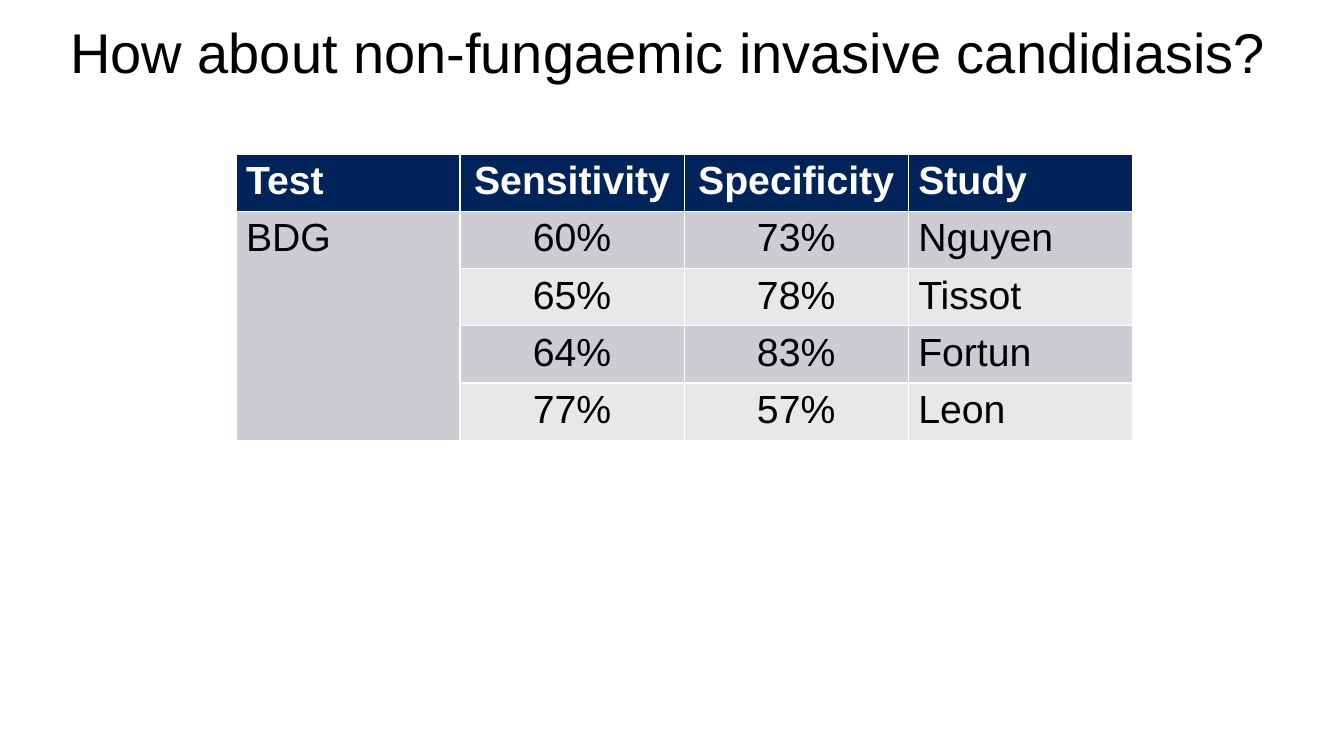
"""Build a slide on test accuracy in non-fungaemic invasive candidiasis."""
from dataclasses import dataclass

import pptx
import pptx.dml.color
import pptx.enum.text
import pptx.util
from pptx.util import Inches

COLORS = {
    "header": "00235A",
    "odd": "CCCDD2",
    "even": "E7E8EA",
    "light": "FFFFFF",
    "dark": "000000",
}
FONT = "Arial"
ALIGN = pptx.enum.text.PP_ALIGN


@dataclass(frozen=True)
class Result:
    """One table row: a test, its accuracy and the study reporting it."""

    test: str
    sensitivity: str
    specificity: str
    study: str

    def values(self) -> tuple[str, ...]:
        """Return the row's texts in column order."""
        return self.test, self.sensitivity, self.specificity, self.study


HEADINGS = Result("Test", "Sensitivity", "Specificity", "Study")
RESULTS = [
    Result("BDG", "60%", "73%", "Nguyen"),
    Result("", "65%", "78%", "Tissot"),
    Result("", "64%", "83%", "Fortun"),
    Result("", "77%", "57%", "Leon"),
]
ALIGNMENTS = [ALIGN.LEFT, ALIGN.CENTER, ALIGN.CENTER, ALIGN.LEFT]


def rgb(color: str) -> pptx.dml.color.RGBColor:
    """Look up a named colour."""
    return pptx.dml.color.RGBColor.from_string(COLORS[color])


def format_paragraph(paragraph, size: int, color: str, align, bold: bool = False) -> None:
    """Set the font and alignment of a whole paragraph."""
    paragraph.alignment = align
    paragraph.font.name = FONT
    paragraph.font.size = pptx.util.Pt(size)
    paragraph.font.bold = bold
    paragraph.font.color.rgb = rgb(color)


def add_question(slide) -> None:
    """Fill the title placeholder with the slide's question."""
    question = slide.shapes.title
    question.left, question.top = Inches(0.24), Inches(0.12)
    question.width, question.height = Inches(12.76), Inches(0.77)
    frame = question.text_frame
    frame.text = "How about non-fungaemic invasive candidiasis?"
    frame.word_wrap = True
    frame.auto_size = pptx.enum.text.MSO_AUTO_SIZE.SHAPE_TO_FIT_TEXT
    frame.vertical_anchor = pptx.enum.text.MSO_ANCHOR.TOP
    format_paragraph(frame.paragraphs[0], 40, "dark", ALIGN.CENTER)


def add_results(slide) -> None:
    """Draw the accuracy table with one test spanning all studies."""
    rows = [HEADINGS, *RESULTS]
    accuracy = slide.shapes.add_table(
        len(rows), len(ALIGNMENTS),
        Inches(2.34), Inches(1.53), Inches(8.89), Inches(2.03),
    ).table
    for row, result in enumerate(rows):
        is_header = row == 0
        fill = "header" if is_header else ("odd" if row % 2 else "even")
        for column, (value, align) in enumerate(zip(result.values(), ALIGNMENTS)):
            cell = accuracy.cell(row, column)
            cell.text = value
            cell.fill.solid()
            cell.fill.fore_color.rgb = rgb(fill)
            format_paragraph(
                cell.text_frame.paragraphs[0], 28,
                "light" if is_header else "dark", align, is_header,
            )
    accuracy.cell(1, 0).merge(accuracy.cell(len(RESULTS), 0))


def main() -> None:
    """Create and save the presentation."""
    presentation = pptx.Presentation()
    presentation.slide_width = Inches(13.33)
    presentation.slide_height = Inches(7.5)
    slide = presentation.slides.add_slide(presentation.slide_layouts[5])
    add_question(slide)
    add_results(slide)
    presentation.save("out.pptx")


if __name__ == "__main__":
    main()
